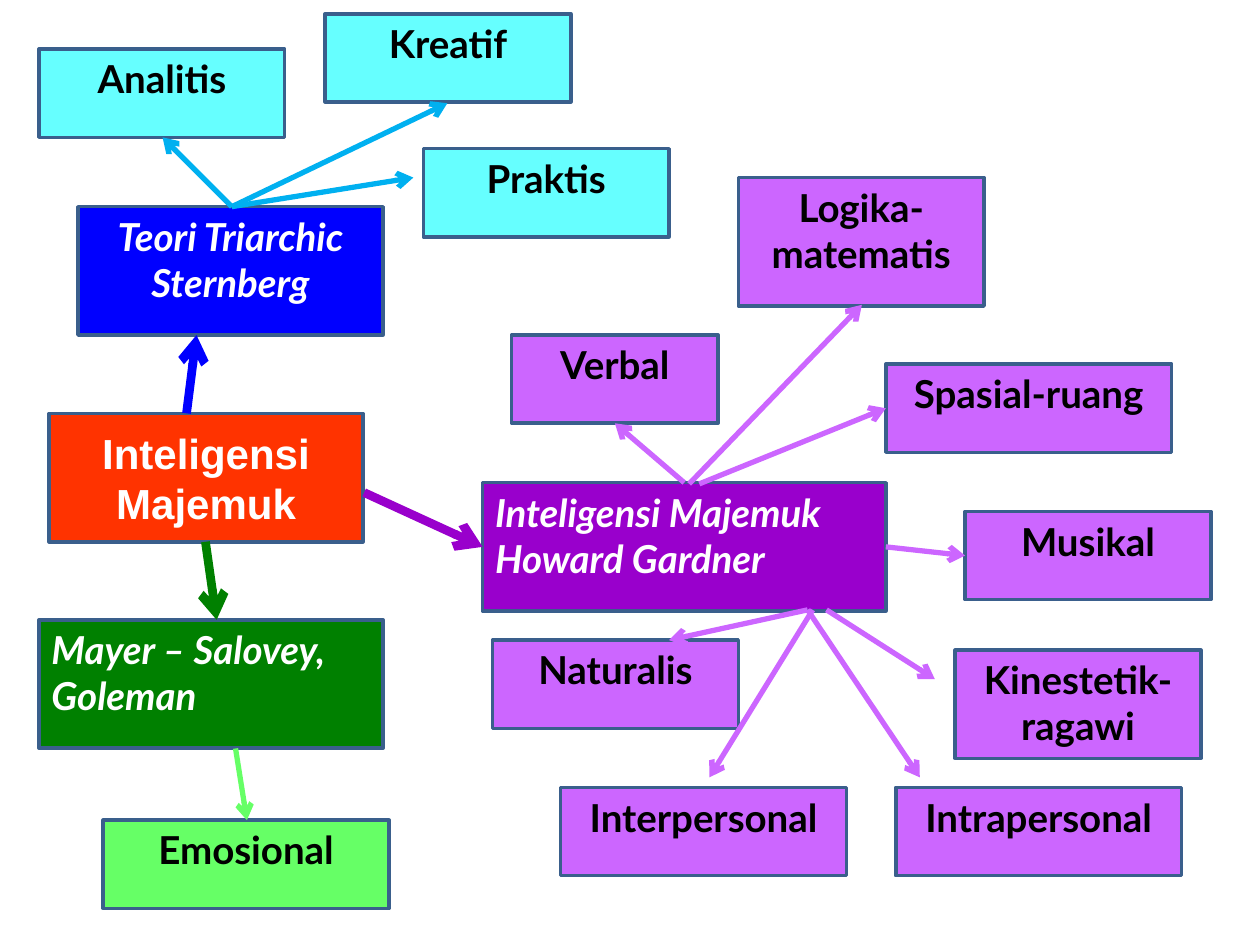
import pptx
import pptx.dml.color
import pptx.enum.shapes
import pptx.enum.text
import pptx.oxml
import pptx.oxml.ns
import pptx.util

Pt = pptx.util.Pt
RGBColor = pptx.dml.color.RGBColor
Align = pptx.enum.text.PP_ALIGN
Anchor = pptx.enum.text.MSO_ANCHOR

BLACK = RGBColor(0x00, 0x00, 0x00)
WHITE = RGBColor(0xFF, 0xFF, 0xFF)
BORDER = RGBColor(0x3A, 0x5F, 0x8C)
RED = RGBColor(0xFF, 0x33, 0x00)
BLUE = RGBColor(0x00, 0x00, 0xFF)
GREEN = RGBColor(0x00, 0x80, 0x00)
PURPLE = RGBColor(0x99, 0x00, 0xCC)
CYAN = RGBColor(0x66, 0xFF, 0xFF)
SKY = RGBColor(0x00, 0xB0, 0xF0)
LILAC = RGBColor(0xCC, 0x66, 0xFF)
LIME = RGBColor(0x66, 0xFF, 0x66)

TITLE_FONT = {"name": "Arial", "size": Pt(24), "bold": True, "italic": False}
THEORY_FONT = {"name": "Lato", "size": Pt(22), "bold": True, "italic": True}
TYPE_FONT = {"name": "Lato", "size": Pt(22), "bold": True, "italic": False}

# Usual sizes of the boxes
NORMAL, WIDE, LOW, TALL = 140.4, 163.4, 50.4, 73.4

# Theories: text lines, fill, alignment, left, top, width, height
THEORIES = [
    (["Teori Triarchic Sternberg"], BLUE, Align.CENTER, 44.6, 118.1, 174.2, TALL),
    (["Mayer – Salovey, Goleman"], GREEN, Align.LEFT, 22.3, 354.2, 196.6, TALL),
    (["Inteligensi Majemuk", "Howard Gardner"], PURPLE, Align.LEFT,
     275.8, 275.8, 230.4, TALL),
]

# Kinds of intelligence: text, fill, left, top, width, height
TYPES = [
    ("Analitis", CYAN, 22.3, 28.1, NORMAL, LOW),
    ("Kreatif", CYAN, 185.8, 7.9, NORMAL, LOW),
    ("Praktis", CYAN, 241.9, 85, NORMAL, LOW),
    ("Verbal", LILAC, 292.3, 191.5, 118, LOW),
    ("Logika-matematis", LILAC, 421.9, 101.5, NORMAL, TALL),
    ("Naturalis", LILAC, 281.5, 365.8, NORMAL, LOW),
    ("Intrapersonal", LILAC, 511.9, 450, WIDE, LOW),
    ("Kinestetik-ragawi", LILAC, 545.8, 371.5, NORMAL, 61.9),
    ("Spasial-ruang", LILAC, 506.2, 208.1, WIDE, LOW),
    ("Musikal", LILAC, 551.5, 292.3, NORMAL, LOW),
    ("Interpersonal", LILAC, 320.4, 450, WIDE, LOW),
    ("Emosional", LIME, 59, 468.7, WIDE, LOW),
]

# Arrows by colour and line width: start x, start y, end x, end y
ARROWS = [
    (BLUE, 5, [(106.6, 236.2, 112.3, 191.5)]),
    (GREEN, 5, [(117.4, 309.6, 123.8, 354.2)]),
    (PURPLE, 5, [(208.1, 281.5, 275.8, 312.5)]),
    (SKY, 3, [(132.5, 118.1, 92.9, 78.5),
              (132.5, 118.1, 255.6, 59),
              (132.5, 118.1, 236.2, 101.5)]),
    (LILAC, 3, [(391, 275.8, 351.4, 241.9),
                (393.8, 276.5, 492.5, 174.2),
                (399.6, 276.5, 506.2, 233.3),
                (464.4, 348.5, 405.4, 444.2),
                (461.5, 348.5, 382.3, 365.8),
                (461.5, 348.5, 525.6, 444.2),
                (472.3, 348.5, 534.2, 388.1),
                (506.2, 312.5, 551.5, 317.5)]),
    (LIME, 3, [(134.6, 427.7, 141.1, 468.7)]),
]


def set_values(target, values):
    for name, value in values.items():
        setattr(target, name, value)


def format_box(box, lines, fill, font, color, align, anchor):
    """Paint a box and write its lines as paragraphs."""
    box.fill.solid()
    box.fill.fore_color.rgb = fill
    box.line.color.rgb = BORDER
    box.line.width = Pt(2)
    frame = box.text_frame
    set_values(frame, {"word_wrap": True, "vertical_anchor": anchor,
                       "auto_size": pptx.enum.text.MSO_AUTO_SIZE.NONE})
    for index, line in enumerate(lines):
        para = frame.paragraphs[0] if index == 0 else frame.add_paragraph()
        para.alignment = align
        span = para.add_run()
        span.text = line
        set_values(span.font, font)
        span.font.color.rgb = color


def add_title(page):
    box = page.shapes.title
    set_values(box, {"left": Pt(28.1), "top": Pt(236.2),
                     "width": Pt(179.3), "height": Pt(TALL)})
    format_box(box, ["Inteligensi Majemuk"], RED, TITLE_FONT, WHITE,
               Align.CENTER, Anchor.MIDDLE)


def add_box(page, lines, fill, font, color, align, bounds):
    box = page.shapes.add_shape(pptx.enum.shapes.MSO_SHAPE.RECTANGLE,
                                *map(Pt, bounds))
    box.shadow.inherit = False
    format_box(box, lines, fill, font, color, align, Anchor.TOP)


def add_arrow(page, color, width, ends):
    arrow = page.shapes.add_connector(pptx.enum.shapes.MSO_CONNECTOR.STRAIGHT,
                                      *map(Pt, ends))
    arrow.line.color.rgb = color
    arrow.line.width = Pt(width)
    # Open arrowhead at the end, and no shadow
    qn = pptx.oxml.ns.qn
    properties = arrow.element.find(qn("p:spPr"))
    head = pptx.oxml.parse_xml(
        "<a:tailEnd %s type='arrow'/>" % pptx.oxml.ns.nsdecls("a"))
    properties.find(qn("a:ln")).append(head)
    properties.append(pptx.oxml.parse_xml(
        "<a:effectLst %s/>" % pptx.oxml.ns.nsdecls("a")))


def main():
    deck = pptx.Presentation()
    set_values(deck, {"slide_width": Pt(720), "slide_height": Pt(540)})
    page = deck.slides.add_slide(deck.slide_layouts.get_by_name("Title Only"))

    # Central topic
    add_title(page)

    # Theories around it
    for lines, fill, align, *bounds in THEORIES:
        add_box(page, lines, fill, THEORY_FONT, WHITE, align, bounds)

    # Kinds of intelligence in each theory
    for text, fill, *bounds in TYPES:
        add_box(page, [text], fill, TYPE_FONT, BLACK, Align.CENTER, bounds)

    # Arrows
    for color, width, routes in ARROWS:
        for ends in routes:
            add_arrow(page, color, width, ends)

    deck.save("out.pptx")


if __name__ == "__main__":
    main()
